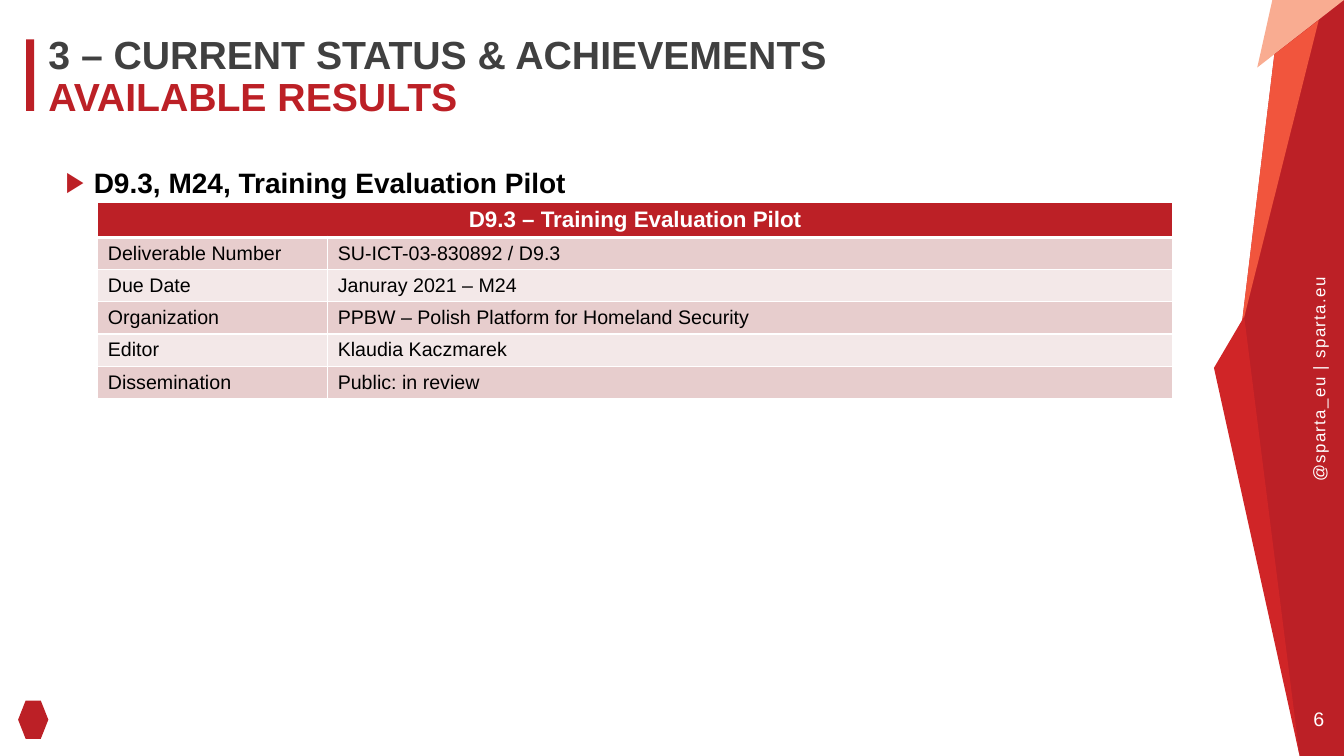
from lxml.etree import SubElement
from pptx import Presentation
from pptx.dml.color import RGBColor
from pptx.enum.shapes import MSO_SHAPE
from pptx.enum.text import MSO_ANCHOR, MSO_AUTO_SIZE, PP_ALIGN
from pptx.oxml.ns import qn
from pptx.util import Inches, Pt

RED, WHITE, BLACK = "BC2026", "FFFFFF", "000000"


def paint(fill, color):
    fill.solid()
    fill.fore_color.rgb = RGBColor.from_string(color)


def write(paragraph, text, size, color, bold=False):
    run = paragraph.add_run()
    run.text = text
    run.font.name = "Arial"
    run.font.size = Pt(size)
    run.font.bold = bold
    paint(run.font.fill, color)
    return run


deck = Presentation()
deck.slide_width, deck.slide_height = Inches(13.33), Inches(7.5)
slide = deck.slides.add_slide(deck.slide_layouts[1])
shapes = slide.shapes

# Faceted band along the right edge
facets = [
    (RED, [(13.33, 0), (13.33, 7.5), (12.89, 7.5), (12.23, 3.94), (12.64, 0.54), (12.76, 0)]),
    ("F9AC91", [(13.33, 0), (12.47, 0.67), (12.62, 0)]),
    ("F1553D", [(13.08, 0.2), (12.31, 3.27), (12.64, 0.54)]),
    ("D02527", [(12.34, 3.14), (12.89, 7.5), (12.04, 3.65)]),
]
for color, points in facets:
    corners = [(Inches(x), Inches(y)) for x, y in points]
    outline = shapes.build_freeform(*corners[0])
    outline.add_line_segments(corners[1:], close=True)
    facet = outline.convert_to_shape()
    facet.shadow.inherit = False
    paint(facet.fill, color)
    facet.line.fill.background()

# Title bar and plain emblem in the lower left corner
for kind, left, top, width, height in [
    (MSO_SHAPE.RECTANGLE, 0.26, 0.39, 0.08, 0.71),
    (MSO_SHAPE.HEXAGON, 0.18, 6.95, 0.3, 0.38),
]:
    accent = shapes.add_shape(kind, Inches(left), Inches(top), Inches(width), Inches(height))
    accent.shadow.inherit = False
    paint(accent.fill, RED)
    accent.line.fill.background()

# Title, heading, web address and page number frames
title, heading = shapes.title, slide.placeholders[1]
address = shapes.add_textbox(0, 0, 0, 0)
page_number = shapes.add_textbox(0, 0, 0, 0)
for block, left, top, width, height, wrap, anchor in [
    (title, 0.48, 0.35, 11.34, 0.87, True, MSO_ANCHOR.TOP),
    (heading, 0.65, 1.64, 11.34, 2.84, True, MSO_ANCHOR.TOP),
    (address, 12.05, 3.65, 2.06, 0.2, False, MSO_ANCHOR.MIDDLE),
    (page_number, 12.96, 7.01, 0.24, 0.24, False, MSO_ANCHOR.MIDDLE),
]:
    block.left, block.top = Inches(left), Inches(top)
    block.width, block.height = Inches(width), Inches(height)
    frame = block.text_frame
    frame.margin_left = frame.margin_right = frame.margin_top = frame.margin_bottom = 0
    frame.word_wrap = wrap
    frame.vertical_anchor = anchor
    frame.auto_size = MSO_AUTO_SIZE.NONE

title_line = title.text_frame.paragraphs[0]
title_line.alignment = PP_ALIGN.LEFT
title_line.line_spacing = 0.9
write(title_line, "3 – CURRENT STATUS & ACHIEVEMENTS", 28, "404040", True)
title_line.add_line_break()
write(title_line, "AVAILABLE RESULTS", 28, RED, True)

heading_line = heading.text_frame.paragraphs[0]
bullet = heading_line._p.get_or_add_pPr()
bullet.set("marL", str(Inches(0.28)))
bullet.set("indent", str(-Inches(0.28)))
SubElement(SubElement(bullet, qn("a:buClr")), qn("a:srgbClr"), val=RED)
SubElement(bullet, qn("a:buFont"), typeface="Arial")
SubElement(bullet, qn("a:buChar"), char="▶")
heading_line.space_before, heading_line.space_after = Pt(0), Pt(6)
write(heading_line, "D9.3, M24, Training Evaluation Pilot", 20, BLACK, True)

address.rotation = 270
address_run = write(address.text_frame.paragraphs[0], "@sparta_eu | sparta.eu", 12, WHITE)
address_run.font._element.set("spc", "100")

page_line = page_number.text_frame.paragraphs[0]
page_line.alignment = PP_ALIGN.CENTER
write(page_line, "6", 14, WHITE)

# Deliverable table
rows = [
    ("D9.3 – Training Evaluation Pilot", ""),
    ("Deliverable Number", "SU-ICT-03-830892 / D9.3"),
    ("Due Date", "Januray 2021 – M24"),
    ("Organization", "PPBW – Polish Platform for Homeland Security"),
    ("Editor", "Klaudia Kaczmarek"),
    ("Dissemination", "Public: in review"),
]
deliverable = shapes.add_table(
    len(rows), 2, Inches(0.97), Inches(2.01), Inches(10.66), Inches(1.86)
).table
deliverable.columns[0].width, deliverable.columns[1].width = Inches(2.28), Inches(8.38)
deliverable.cell(0, 0).merge(deliverable.cell(0, 1))

for r, row in enumerate(rows):
    header = r == 0
    deliverable.rows[r].height = Inches(0.31)
    for c, text in enumerate(row):
        cell = deliverable.cell(r, c)
        cell.vertical_anchor = MSO_ANCHOR.MIDDLE
        # Thin white borders, thicker below the header
        for side in ("lnL", "lnR", "lnT", "lnB"):
            thick = (r, side) in [(0, "lnB"), (1, "lnT")]
            border = SubElement(cell._tc.get_or_add_tcPr(), qn(f"a:{side}"),
                                w=str(Pt(3 if thick else 1)))
            SubElement(SubElement(border, qn("a:solidFill")), qn("a:srgbClr"), val=WHITE)
        paint(cell.fill, RED if header else ("F3E8E8", "E7CDCD")[r % 2])
        if text:
            line = cell.text_frame.paragraphs[0]
            line.alignment = PP_ALIGN.CENTER if header else PP_ALIGN.LEFT
            write(line, text, 16 if header else 14, WHITE if header else BLACK, header)

deck.save("out.pptx")
